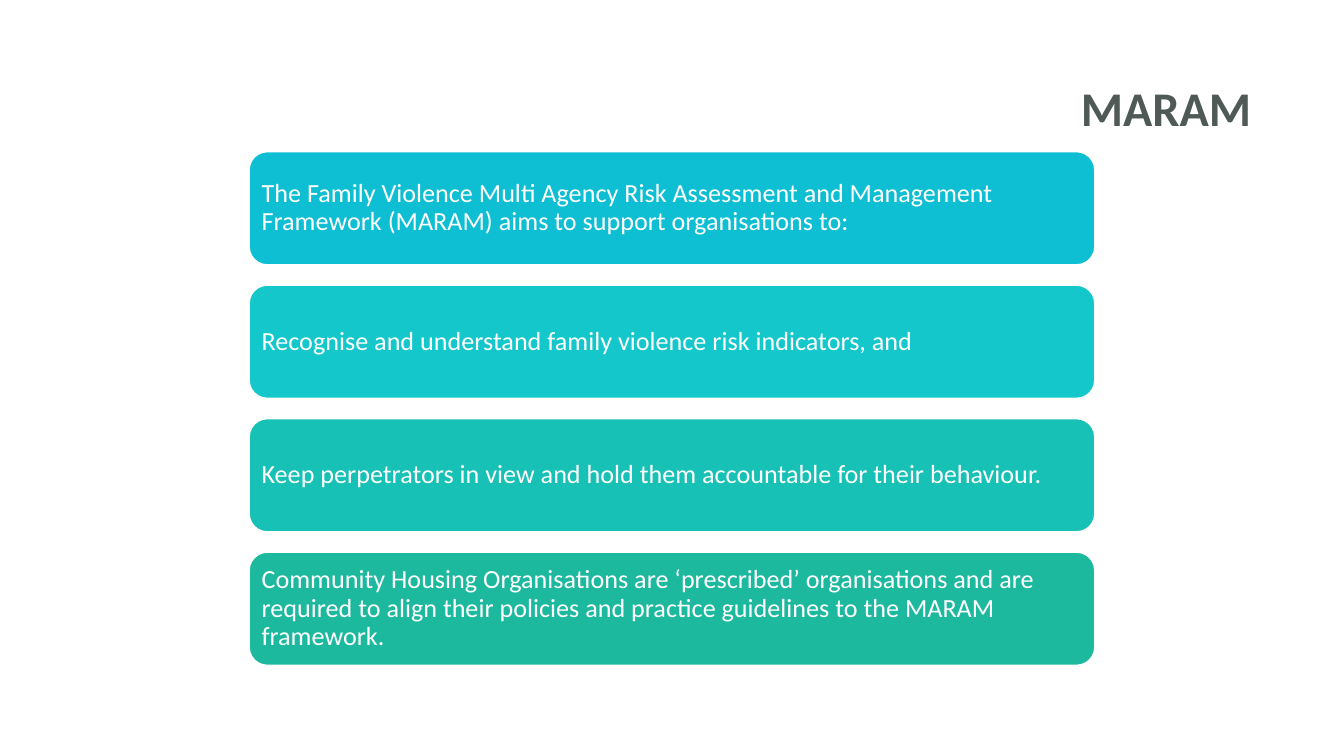
from pptx import Presentation
from pptx.dml.color import RGBColor
from pptx.enum.shapes import MSO_SHAPE as Shape
from pptx.enum.text import MSO_ANCHOR as Anchor, PP_ALIGN as Align
from pptx.util import Inches, Pt

TITLE = "MARAM"
AIMS = [
    ("The Family Violence Multi Agency Risk Assessment and Management "
     "Framework (MARAM) aims to support organisations to:", "blue"),
    ("Recognise and understand family violence risk indicators, and", "cyan"),
    ("Keep perpetrators in view and hold them accountable for their behaviour.", "teal"),
    ("Community Housing Organisations are ‘prescribed’ organisations and are "
     "required to align their policies and practice guidelines to the MARAM "
     "framework.", "green"),
]
COLORS = {
    "title": "4F5956",
    "white": "FFFFFF",
    "blue": "0EBED3",
    "cyan": "13C7CA",
    "teal": "18C1B5",
    "green": "1DB99F",
}
FONT = "Calibri"
SLIDE_WIDTH = 10
SLIDE_HEIGHT = SLIDE_WIDTH * 9 / 16
BAR_WIDTH, BAR_HEIGHT = 6.31, 0.86
BAR_LEFT = (SLIDE_WIDTH - BAR_WIDTH) / 2
FIRST_TOP, LAST_TOP = 1.12, 4.10
BAR_MARGIN = Inches(0.06)


def color(name):
    return RGBColor.from_string(COLORS[name])


def write(shape, text, size, color_name, align, anchor, bold=False):
    text_frame = shape.text_frame
    text_frame.text = text
    text_frame.word_wrap = True
    text_frame.vertical_anchor = anchor
    paragraph = text_frame.paragraphs[0]
    paragraph.alignment = align
    paragraph.space_before = Pt(0)
    font = paragraph.runs[0].font
    font.name = FONT
    font.size = Pt(size)
    font.bold = bold
    font.color.rgb = color(color_name)
    return paragraph


def add_title(slide):
    title = slide.shapes.title
    title.left, title.top = Inches(3.82), Inches(0.53)
    title.width, title.height = Inches(5.59), Inches(0.47)
    write(title, TITLE, 25.9, "title", Align.RIGHT, Anchor.TOP, bold=True)


def add_bar(slide, top, text, fill):
    bar = slide.shapes.add_shape(
        Shape.ROUNDED_RECTANGLE, Inches(BAR_LEFT), Inches(top),
        Inches(BAR_WIDTH), Inches(BAR_HEIGHT))
    bar.shadow.inherit = False
    bar.fill.solid()
    bar.fill.fore_color.rgb = color(fill)
    bar.line.color.rgb = color("white")
    bar.line.width = Pt(2)
    text_frame = bar.text_frame
    text_frame.margin_left = text_frame.margin_right = BAR_MARGIN
    text_frame.margin_top = text_frame.margin_bottom = BAR_MARGIN
    paragraph = write(bar, text, 14, "white", Align.LEFT, Anchor.MIDDLE)
    paragraph.line_spacing = 0.9


def main():
    presentation = Presentation()
    presentation.slide_width = Inches(SLIDE_WIDTH)
    presentation.slide_height = Inches(SLIDE_HEIGHT)
    slide = presentation.slides.add_slide(presentation.slide_layouts[5])
    add_title(slide)
    pitch = (LAST_TOP - FIRST_TOP) / (len(AIMS) - 1)
    for index, (text, fill) in enumerate(AIMS):
        add_bar(slide, FIRST_TOP + index * pitch, text, fill)
    presentation.save("out.pptx")


if __name__ == "__main__":
    main()
